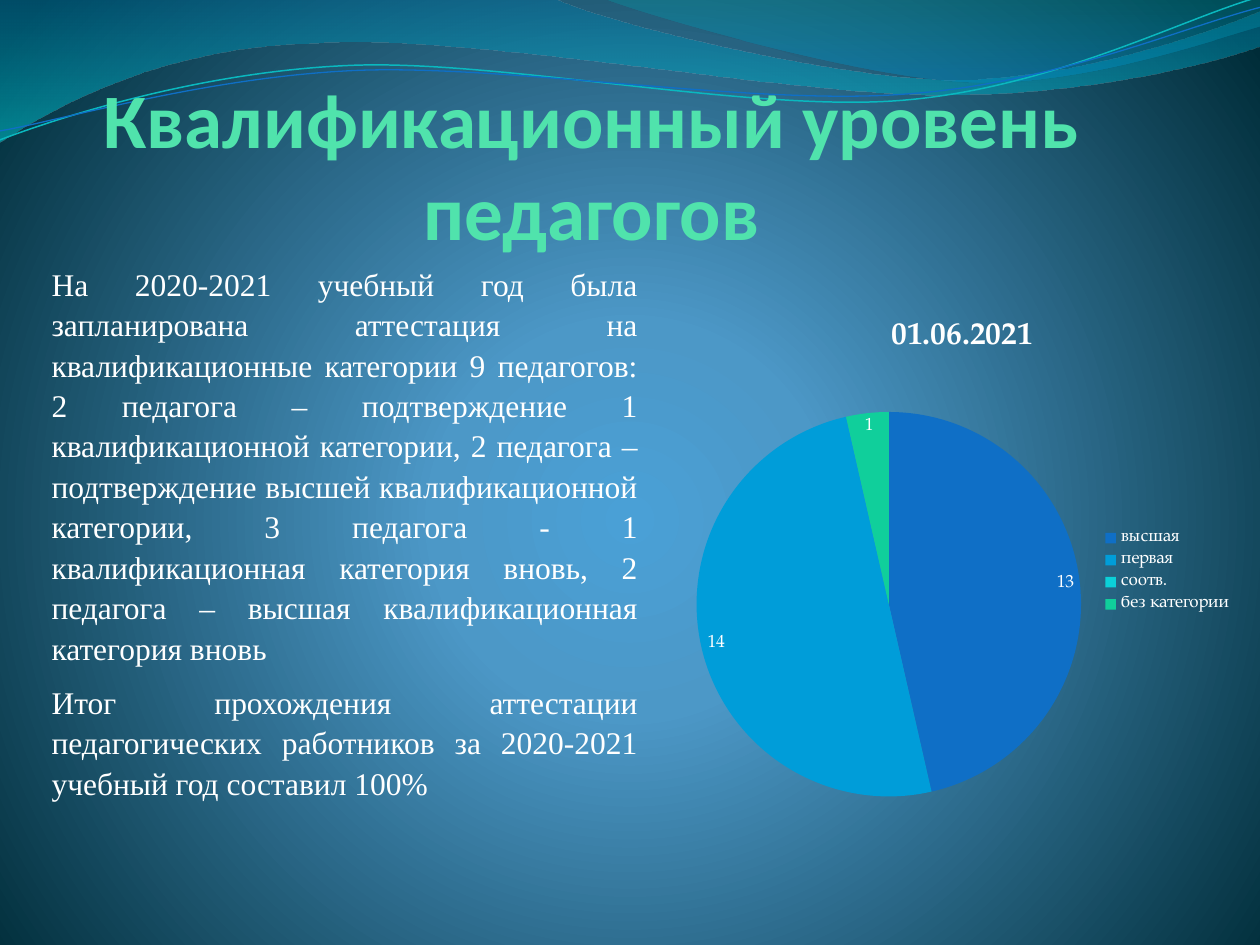
from lxml.etree import SubElement
from pptx import Presentation
from pptx.chart.data import CategoryChartData
from pptx.dml.color import RGBColor
from pptx.enum.chart import XL_CHART_TYPE, XL_LABEL_POSITION, XL_LEGEND_POSITION
from pptx.enum.text import MSO_ANCHOR, PP_ALIGN
from pptx.oxml.ns import qn
from pptx.util import Cm, Pt

COLORS = {
    "white": "FFFFFF", "heading": "50E3AC",
    "glow": "4AA0D6", "mist": "4C98C7", "depth": "002C38",
    "wave_blue": "0074A1", "wave_cyan": "00C6CF",
    "crest_teal": "00A1A9", "crest_blue": "008BBF",
    "line_cyan": "0AB8BF", "line_blue": "0F6FC6",
}
CATEGORIES = {
    "высшая": (13, "0F6FC6"),
    "первая": (14, "009DD9"),
    "соотв.": (0, "0BD0D9"),
    "без категории": (1, "10CF9B"),
}
REPORT_DATE = "01.06.2021"
HEADING = "Квалификационный уровень педагогов"
PARAGRAPHS = [
    "На 2020-2021 учебный год была запланирована аттестация на квалификационные "
    "категории 9 педагогов: 2 педагога – подтверждение 1 квалификационной категории, "
    "2 педагога – подтверждение высшей квалификационной категории, 3 педагога - 1 "
    "квалификационная категория вновь, 2 педагога – высшая квалификационная категория вновь",
    "Итог прохождения аттестации педагогических работников за 2020-2021 учебный год "
    "составил 100%",
]
BANDS = [
    ([(0, 0), (11.18, -0.03),
      (12.09, 0.43, 16.87, 1.6, 19.25, 1.6), (21.67, 1.6, 24.33, 0.66, 25.4, 0.23),
      (25.43, 0.91), (24.97, 1.12, 22.1, 1.93, 18.95, 1.91),
      (15.8, 1.91, 9.7, 0.71, 6.53, 0.86), (3.28, 0.91, 1.17, 2.11, -0.03, 2.87)],
     [(0, "wave_blue", 45), (100, "wave_cyan", 55)]),
    ([(12.17, -0.03), (12.93, 0.28, 17.32, 1.57, 19.53, 1.65),
      (21.74, 1.75, 24.41, 0.81, 25.4, 0.53), (25.4, 0)],
     [(0, "crest_teal", 30), (80, "crest_blue", 45)]),
]
STRANDS = [
    ([(0, 2.82), (1.22, 2.36, 4.01, 1.45, 7.04, 1.32),
      (10.03, 1.19, 15.06, 2.26, 18.11, 2.03), (21.16, 1.8, 23.83, 0.38, 25.35, -0.05)],
     "line_cyan", 0.85),
    ([(0, 2.64), (1.19, 2.44, 4.17, 1.55, 7.19, 1.42),
      (10.24, 1.3, 15.16, 2.13, 18.21, 1.9), (21.23, 1.7, 23.9, 0.53, 25.4, 0.15)],
     "line_blue", 0.75),
]


def rgb(name):
    """Return the named colour."""
    return RGBColor.from_string(COLORS[name])


def set_gradient(fill, owner, stops, focus=None):
    """Fill with stops of position, colour and opacity, downward or around a focus."""
    fill.gradient()
    gradient = next(owner.iter(qn("a:gradFill")))
    for child in list(gradient):
        gradient.remove(child)
    stop_list = SubElement(gradient, qn("a:gsLst"))
    for position, name, opacity in stops:
        stop = SubElement(stop_list, qn("a:gs"), pos=str(position * 1000))
        color = SubElement(stop, qn("a:srgbClr"), val=COLORS[name])
        if opacity < 100:
            SubElement(color, qn("a:alpha"), val=str(opacity * 1000))
    if focus:
        circle = SubElement(gradient, qn("a:path"), path="circle")
        SubElement(circle, qn("a:fillToRect"),
                   **{side: str(share * 1000) for side, share in focus.items()})
    else:
        SubElement(gradient, qn("a:lin"), ang="5400000", scaled="0")


def add_curve(slide, left, top, outline, closed):
    """Draw an outline of points and Bezier segments from the given corner."""
    points = [(left + Cm(x), top + Cm(y)) for segment in outline
              for x, y in zip(segment[::2], segment[1::2])]
    builder = slide.shapes.build_freeform(*points[0])
    builder.add_line_segments(points[1:], close=closed)
    curve = builder.convert_to_shape()
    curve.shadow.inherit = False
    route = next(curve.element.iter(qn("a:path")))
    steps = iter(route.findall(qn("a:lnTo")))
    for segment in outline[1:]:
        step = next(steps)
        if len(segment) == 6:
            bezier = SubElement(route, qn("a:cubicBezTo"))
            step.addprevious(bezier)
            for control in (step, next(steps), next(steps)):
                bezier.append(control[0])
                route.remove(control)
    return curve


def add_waves(slide, left, top):
    """Draw the translucent bands and thin strands along the top."""
    for outline, stops in BANDS:
        band = add_curve(slide, left, top, outline, True)
        set_gradient(band.fill, band.element, stops)
        band.line.fill.background()
    for outline, color, width in STRANDS:
        strand = add_curve(slide, left, top, outline, False)
        strand.fill.background()
        strand.line.color.rgb = rgb(color)
        strand.line.width = Pt(width)


def add_text(slide, left, top, width, height, paragraphs, *, font, size, color, align,
             bold=False, anchor=MSO_ANCHOR.TOP, inset=None, spacing=None, after=None):
    """Add a wrapped text box with one format for all paragraphs."""
    frame = slide.shapes.add_textbox(left, top, width, height).text_frame
    frame.word_wrap = True
    frame.vertical_anchor = anchor
    if inset is not None:
        frame.margin_left = frame.margin_right = inset
        frame.margin_top = frame.margin_bottom = inset
    for index, text in enumerate(paragraphs):
        paragraph = frame.add_paragraph() if index else frame.paragraphs[0]
        paragraph.alignment = align
        paragraph.line_spacing = spacing
        paragraph.space_after = after
        run = paragraph.add_run()
        run.text = text
        run.font.name, run.font.size, run.font.bold = font, Pt(size), bold
        run.font.color.rgb = rgb(color)


def add_category_chart(slide, left, top, width, height):
    """Add the pie of teachers by qualification category."""
    data = CategoryChartData(number_format="0")
    data.categories = list(CATEGORIES)
    data.add_series(REPORT_DATE, [count for count, _ in CATEGORIES.values()])
    chart = slide.shapes.add_chart(XL_CHART_TYPE.PIE, left, top, width, height, data).chart
    chart.font.name, chart.font.size = "TeX Gyre Pagella", Pt(10)
    chart.font.color.rgb = rgb("white")

    chart.has_title = True
    chart.chart_title.include_in_layout = False
    chart.chart_title.text_frame.text = REPORT_DATE
    title_font = chart.chart_title.text_frame.paragraphs[0].runs[0].font
    title_font.name, title_font.size, title_font.bold = "TeX Gyre Pagella", Pt(18), True
    title_font.color.rgb = rgb("white")

    chart.has_legend = True
    chart.legend.position = XL_LEGEND_POSITION.RIGHT
    chart.legend.include_in_layout = False

    pie = chart.plots[0]
    pie.vary_by_categories = True
    for index, (_, color) in enumerate(CATEGORIES.values()):
        slice_fill = pie.series[0].points[index].format.fill
        slice_fill.solid()
        slice_fill.fore_color.rgb = RGBColor.from_string(color)
    pie.has_data_labels = True
    labels = pie.data_labels
    labels.show_value, labels.show_percentage = True, False
    labels.number_format, labels.number_format_is_linked = "#", False
    labels.position = XL_LABEL_POSITION.BEST_FIT

    plot_area = next(chart.element.iter(qn("c:plotArea")))
    for old in plot_area.findall(qn("c:layout")):
        plot_area.remove(old)
    layout = SubElement(plot_area, qn("c:layout"))
    plot_area.insert(0, layout)
    manual = SubElement(layout, qn("c:manualLayout"))
    settings = {"layoutTarget": "inner", "xMode": "edge", "yMode": "edge",
                "x": 0.03, "y": 0.21, "w": 0.68, "h": 0.7}
    for tag, value in settings.items():
        SubElement(manual, qn(f"c:{tag}"), val=str(value))


def main():
    """Build the slide and save it."""
    deck = Presentation()
    deck.slide_width, deck.slide_height = Cm(25.4), Cm(19.05)
    slide = deck.slides.add_slide(deck.slide_layouts[6])
    set_gradient(slide.background.fill, slide.element,
                 [(0, "glow", 100), (25, "mist", 100), (100, "depth", 100)],
                 focus={"l": 10, "t": 110, "r": 10, "b": 100})
    add_waves(slide, Cm(0), Cm(0))
    add_text(slide, Cm(0.79), Cm(1.98), Cm(22.28), Cm(3.18), [HEADING],
             font="Calibri", size=44, color="heading", bold=True,
             align=PP_ALIGN.CENTER, anchor=MSO_ANCHOR.BOTTOM, inset=Cm(0))
    add_category_chart(slide, Cm(13.7), Cm(5.95), Cm(11.4), Cm(11.13))
    add_text(slide, Cm(0.79), Cm(5.16), Cm(12.32), Cm(11.2), PARAGRAPHS,
             font="Times New Roman", size=18, color="white",
             align=PP_ALIGN.JUSTIFY, spacing=1.07, after=Pt(8))
    deck.save("out.pptx")


if __name__ == "__main__":
    main()
